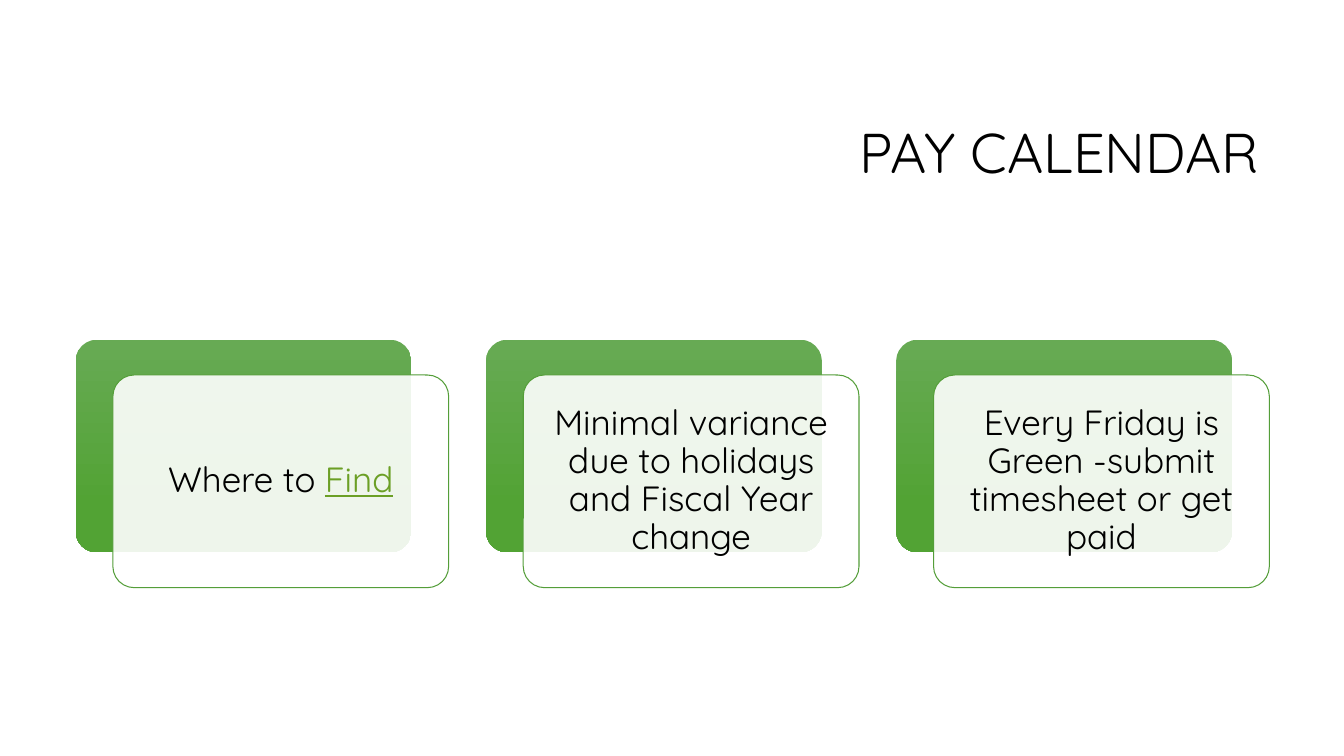
from lxml import etree
from pptx import Presentation
from pptx.dml.color import RGBColor
from pptx.enum.shapes import MSO_SHAPE
from pptx.enum.text import MSO_ANCHOR, MSO_AUTO_SIZE, PP_ALIGN
from pptx.oxml.ns import qn
from pptx.util import Inches, Pt

ROUND = MSO_SHAPE.ROUNDED_RECTANGLE
MIDDLE = MSO_ANCHOR.MIDDLE
NO_FIT = MSO_AUTO_SIZE.NONE
CENTER, RIGHT = PP_ALIGN.CENTER, PP_ALIGN.RIGHT

FONT = "Quicksand"
BLACK, WHITE, GREEN, LINK = "000000", "FFFFFF", "549E39", "6B9F25"
SHADES = [(0, "67AA54"), (0.78, "52A334")]
LEFT, TOP, STEP = 0.75, 3.37, 4.07
WIDTH, HEIGHT = 3.33, 2.11
SHIFT_X, SHIFT_Y = 0.37, 0.35
CARDS = [
    [("Where to ", BLACK), ("Find", LINK)],
    [("Minimal variance due to holidays and Fiscal Year change", BLACK)],
    [("Every Friday is Green -submit timesheet or get paid", BLACK)],
]


def rgb(code):
    return RGBColor.from_string(code)


def write(frame, runs, size, align):
    frame.word_wrap = True
    frame.auto_size = NO_FIT
    frame.vertical_anchor = MIDDLE
    para = frame.paragraphs[0]
    para.alignment = align
    para.line_spacing = 0.9
    for text, color in runs:
        run = para.add_run()
        run.text = text
        run.font.name = FONT
        run.font.size = Pt(size)
        run.font.color.rgb = rgb(color)
        if color == LINK:
            run.font.underline = True


def add_title(slide, text):
    title = slide.shapes.title
    title.left, title.top = Inches(3.17), Inches(0.84)
    title.width, title.height = Inches(9.42), Inches(1.41)
    write(title.text_frame, [(text, BLACK)], 40, RIGHT)


def add_box(slide, left, top):
    box = slide.shapes.add_shape(
        ROUND, Inches(left), Inches(top), Inches(WIDTH), Inches(HEIGHT))
    box.adjustments[0] = 0.1
    box.shadow.inherit = False
    return box


def add_back(slide, left, top):
    back = add_box(slide, left, top)
    back.line.fill.background()
    back.fill.gradient()
    back.fill.gradient_angle = 270
    for stop, (place, color) in zip(back.fill.gradient_stops, SHADES):
        stop.position = place
        stop.color.rgb = rgb(color)


def add_card(slide, left, top, runs):
    card = add_box(slide, left, top)
    card.fill.solid()
    card.fill.fore_color.rgb = rgb(WHITE)
    fill = card._element.spPr.find(qn("a:solidFill"))
    etree.SubElement(fill[0], qn("a:alpha"), val="90000")
    card.line.color.rgb = rgb(GREEN)
    card.line.width = Pt(0.75)
    frame = card.text_frame
    frame.margin_left = frame.margin_right = Inches(0.1)
    frame.margin_top = frame.margin_bottom = Inches(0.1)
    write(frame, runs, 25, CENTER)


def main():
    deck = Presentation()
    deck.slide_width, deck.slide_height = Inches(13.33), Inches(7.5)
    slide = deck.slides.add_slide(deck.slide_layouts[5])
    add_title(slide, "PAY CALENDAR")
    for index, runs in enumerate(CARDS):
        left = LEFT + index * STEP
        add_back(slide, left, TOP)
        add_card(slide, left + SHIFT_X, TOP + SHIFT_Y, runs)
    deck.save("out.pptx")


if __name__ == "__main__":
    main()
